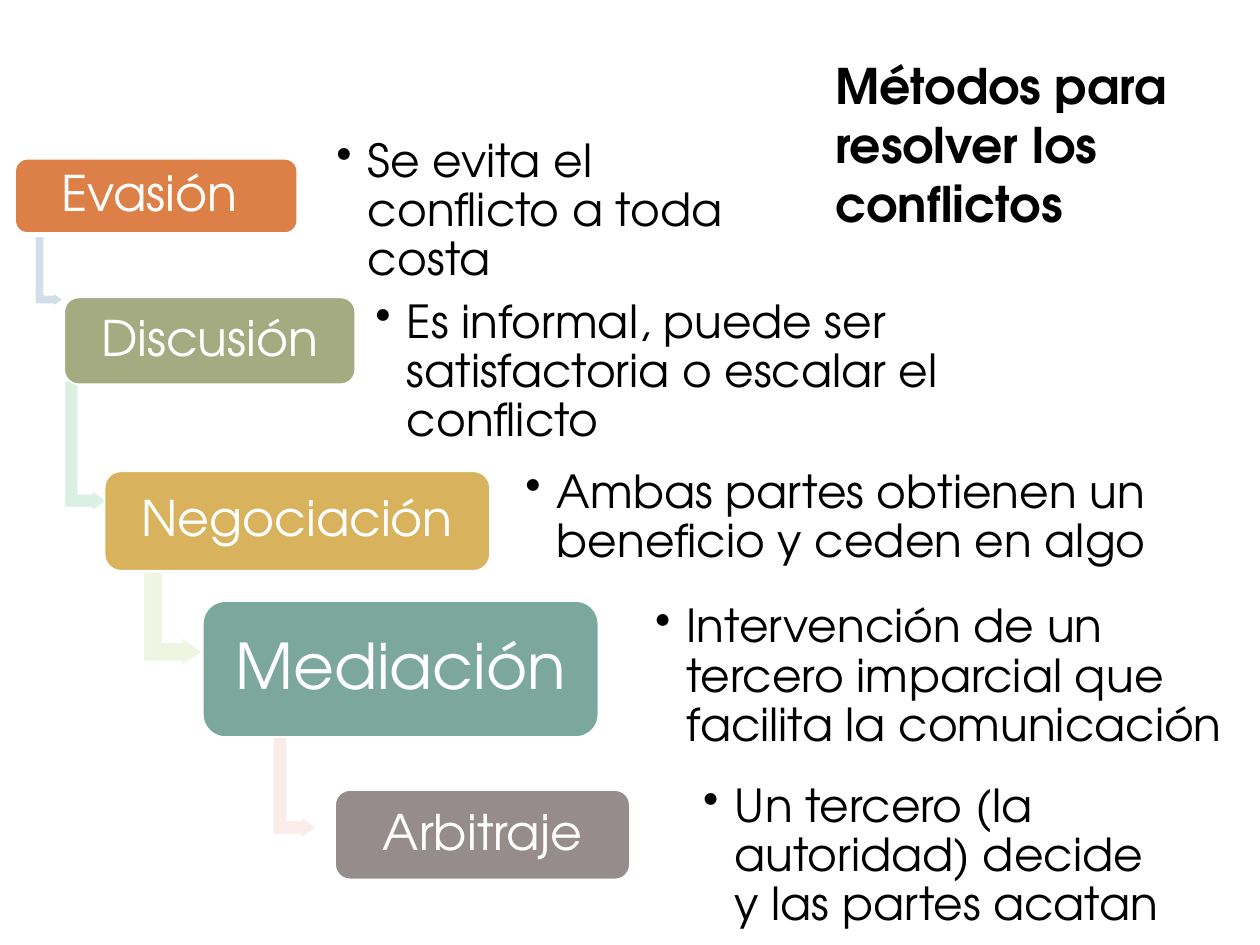
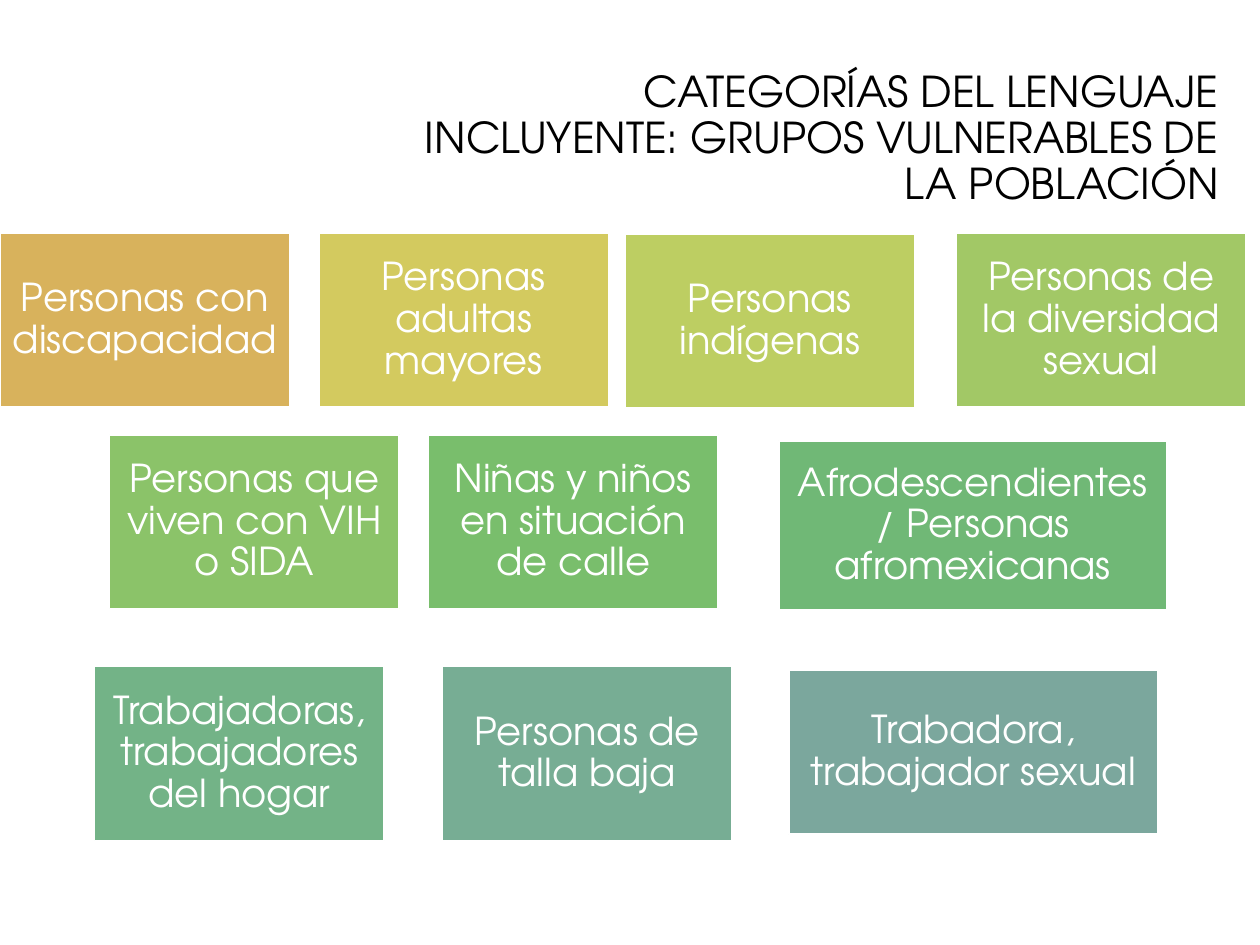
import dataclasses
from typing import Optional

import lxml.etree
import pptx
import pptx.dml.color
import pptx.enum.shapes
import pptx.enum.text
import pptx.oxml.ns
import pptx.presentation
import pptx.shapes.autoshape
import pptx.slide
import pptx.text.text
import pptx.util

Inches = pptx.util.Inches
RGBColor = pptx.dml.color.RGBColor
ShapeKind = pptx.enum.shapes.MSO_SHAPE
Align = pptx.enum.text.PP_ALIGN
Anchor = pptx.enum.text.MSO_ANCHOR
Frame = tuple[float, float, float, float]

FONT = "TeX Gyre Adventor"
BLACK = RGBColor(0x00, 0x00, 0x00)
WHITE = RGBColor(0xFF, 0xFF, 0xFF)
ORANGE = RGBColor(0xDD, 0x80, 0x47)
OLIVE = RGBColor(0xA5, 0xAB, 0x81)
GOLD = RGBColor(0xD8, 0xB2, 0x5C)
TEAL = RGBColor(0x7B, 0xA7, 0x9D)
TAUPE = RGBColor(0x96, 0x8C, 0x8C)
PALE_BLUE = RGBColor(0xD2, 0xDE, 0xEA)
PALE_MINT = RGBColor(0xD9, 0xF0, 0xE2)
PALE_LIME = RGBColor(0xEE, 0xF5, 0xE0)
PALE_ROSE = RGBColor(0xF9, 0xEC, 0xE9)
MUSTARD = RGBColor(0xD3, 0xCA, 0x5F)
LIME = RGBColor(0xBD, 0xCE, 0x62)
LIGHT_GREEN = RGBColor(0xA2, 0xC8, 0x66)
LEAF = RGBColor(0x8B, 0xC3, 0x69)
GREEN = RGBColor(0x79, 0xBE, 0x6C)
EMERALD = RGBColor(0x70, 0xB8, 0x76)
JADE = RGBColor(0x73, 0xB3, 0x87)
SEA = RGBColor(0x77, 0xAD, 0x94)

ARROW_ADJUSTMENTS = (0.328, 0.25, 0.358)
TILE_WIDTH, TILE_HEIGHT = 2.3, 1.38


@dataclasses.dataclass(frozen=True)
class TextStyle:
    size: float
    color: RGBColor = BLACK
    bold: bool = False
    align: Align = Align.LEFT
    anchor: Anchor = Anchor.MIDDLE
    spacing: float = 0.9
    inset: Optional[float] = None
    bullet: bool = False


@dataclasses.dataclass(frozen=True)
class Arrow:
    frame: Frame
    color: RGBColor


@dataclasses.dataclass(frozen=True)
class Method:
    name: str
    frame: Frame
    color: RGBColor
    description: str
    description_frame: Frame
    arrow: Optional[Arrow] = None
    size: float = 28
    inset: float = 0.12


@dataclasses.dataclass(frozen=True)
class Group:
    name: str
    left: float
    top: float
    color: RGBColor
    width: float = TILE_WIDTH
    height: float = TILE_HEIGHT


DESCRIPTION_STYLE = TextStyle(26, inset=0.11, bullet=True)
METHODS_TITLE_STYLE = TextStyle(28, bold=True, anchor=Anchor.TOP, spacing=1.0)
GROUPS_TITLE_STYLE = TextStyle(24.3, align=Align.RIGHT)
TILE_STYLE = TextStyle(22, WHITE, align=Align.CENTER, inset=0.09)

METHODS = (
    Method("Evasión ", (0.12, 1.26, 2.24, 0.59), ORANGE,
           "Se evita el conflicto a toda costa", (2.56, 1.18, 3.85, 1),
           Arrow((0.11, 2.04, 0.56, 0.23), PALE_BLUE)),
    Method("Discusión", (0.51, 2.36, 2.31, 0.69), OLIVE,
           "Es informal, puede ser satisfactoria o escalar el conflicto",
           (2.87, 2.52, 4.83, 0.88),
           Arrow((0.16, 3.37, 1.04, 0.34), PALE_MINT)),
    Method("Negociación", (0.83, 3.74, 3.06, 0.79), GOLD,
           "Ambas partes obtienen un beneficio y ceden en algo",
           (4.06, 3.74, 5.3, 0.74),
           Arrow((1, 4.68, 0.75, 0.47), PALE_LIME)),
    Method("Mediación", (1.61, 4.77, 3.14, 1.08), TEAL,
           "Intervención de un tercero imparcial que facilita la comunicación",
           (5.09, 4.9, 4.85, 0.95),
           Arrow((1.91, 6.05, 0.86, 0.35), PALE_ROSE), size=36, inset=0.15),
    Method("Arbitraje", (2.66, 6.27, 2.34, 0.71), TAUPE,
           "Un tercero (la autoridad) decide y las partes acatan",
           (5.47, 6.35, 3.91, 0.9)),
)

GROUPS = (
    Group("Personas con discapacidad", 0, 1.85, GOLD),
    Group("Personas adultas mayores", 2.53, 1.85, MUSTARD),
    Group("Personas indígenas", 4.96, 1.86, LIME),
    Group("Personas de la diversidad sexual", 7.59, 1.85, LIGHT_GREEN),
    Group("Personas que viven con VIH o SIDA", 0.87, 3.45, LEAF),
    Group("Niñas y niños en situación de calle", 3.4, 3.45, GREEN),
    Group("Afrodescendientes/ Personas afromexicanas", 6.18, 3.5, EMERALD, 3.08, 1.34),
    Group("Trabajadoras, trabajadores del hogar", 0.75, 5.29, JADE),
    Group("Personas de talla baja", 3.51, 5.29, SEA),
    Group("Trabadora, trabajador sexual", 6.26, 5.32, TEAL, 2.93, 1.3),
)


def add_bullet(paragraph: pptx.text.text._Paragraph) -> None:
    paragraph.level = 1
    properties = paragraph._p.get_or_add_pPr()
    properties.set("marL", str(Inches(0.25)))
    properties.set("indent", str(Inches(-0.25)))
    bullet = lxml.etree.SubElement(properties, pptx.oxml.ns.qn("a:buChar"))
    bullet.set("char", "•")


def write_text(frame: pptx.text.text.TextFrame, text: str, style: TextStyle) -> None:
    frame.word_wrap = True
    frame.vertical_anchor = style.anchor
    if style.inset is not None:
        frame.margin_left = frame.margin_right = Inches(style.inset)
        frame.margin_top = frame.margin_bottom = Inches(style.inset)
    paragraph = frame.paragraphs[0]
    if style.bullet:
        add_bullet(paragraph)
    paragraph.alignment = style.align
    paragraph.line_spacing = style.spacing
    run = paragraph.add_run()
    run.text = text
    run.font.name = FONT
    run.font.size = pptx.util.Pt(style.size)
    run.font.bold = style.bold
    run.font.color.rgb = style.color


def add_text(slide: pptx.slide.Slide, frame: Frame, text: str, style: TextStyle) -> None:
    box = slide.shapes.add_textbox(*map(Inches, frame))
    write_text(box.text_frame, text, style)


def add_block(
    slide: pptx.slide.Slide, kind: ShapeKind, frame: Frame, color: RGBColor
) -> pptx.shapes.autoshape.Shape:
    shape = slide.shapes.add_shape(kind, *map(Inches, frame))
    shape.shadow.inherit = False
    shape.fill.solid()
    shape.fill.fore_color.rgb = color
    shape.line.color.rgb = WHITE
    shape.line.width = pptx.util.Pt(1)
    return shape


def add_arrow(slide: pptx.slide.Slide, arrow: Arrow) -> None:
    shape = add_block(slide, ShapeKind.BENT_UP_ARROW, arrow.frame, arrow.color)
    shape.rotation = 90
    for index, value in enumerate(ARROW_ADJUSTMENTS):
        shape.adjustments[index] = value


def add_method(slide: pptx.slide.Slide, method: Method) -> None:
    if method.arrow:
        add_arrow(slide, method.arrow)
    shape = add_block(slide, ShapeKind.ROUNDED_RECTANGLE, method.frame, method.color)
    style = TextStyle(method.size, WHITE, align=Align.CENTER, inset=method.inset)
    write_text(shape.text_frame, method.name, style)
    add_text(slide, method.description_frame, method.description, DESCRIPTION_STYLE)


def add_group(slide: pptx.slide.Slide, group: Group) -> None:
    frame = (group.left, group.top, group.width, group.height)
    shape = add_block(slide, ShapeKind.RECTANGLE, frame, group.color)
    write_text(shape.text_frame, group.name, TILE_STYLE)


def add_blank_slide(presentation: pptx.presentation.Presentation) -> pptx.slide.Slide:
    return presentation.slides.add_slide(presentation.slide_layouts[6])


def build_methods_slide(presentation: pptx.presentation.Presentation) -> None:
    slide = add_blank_slide(presentation)
    for method in METHODS:
        add_method(slide, method)
    add_text(slide, (6.53, 0.39, 3.46, 1.51),
             "Métodos para resolver los conflictos", METHODS_TITLE_STYLE)


def build_groups_slide(presentation: pptx.presentation.Presentation) -> None:
    slide = add_blank_slide(presentation)
    add_text(slide, (2.95, 0.52, 6.82, 1.18),
             "CATEGORÍAS DEL LENGUAJE INCLUYENTE: GRUPOS VULNERABLES DE LA POBLACIÓN",
             GROUPS_TITLE_STYLE)
    for group in GROUPS:
        add_group(slide, group)


def main() -> None:
    presentation = pptx.Presentation()
    presentation.slide_width = Inches(10)
    presentation.slide_height = Inches(7.5)
    build_methods_slide(presentation)
    build_groups_slide(presentation)
    presentation.save("out.pptx")


if __name__ == "__main__":
    main()
